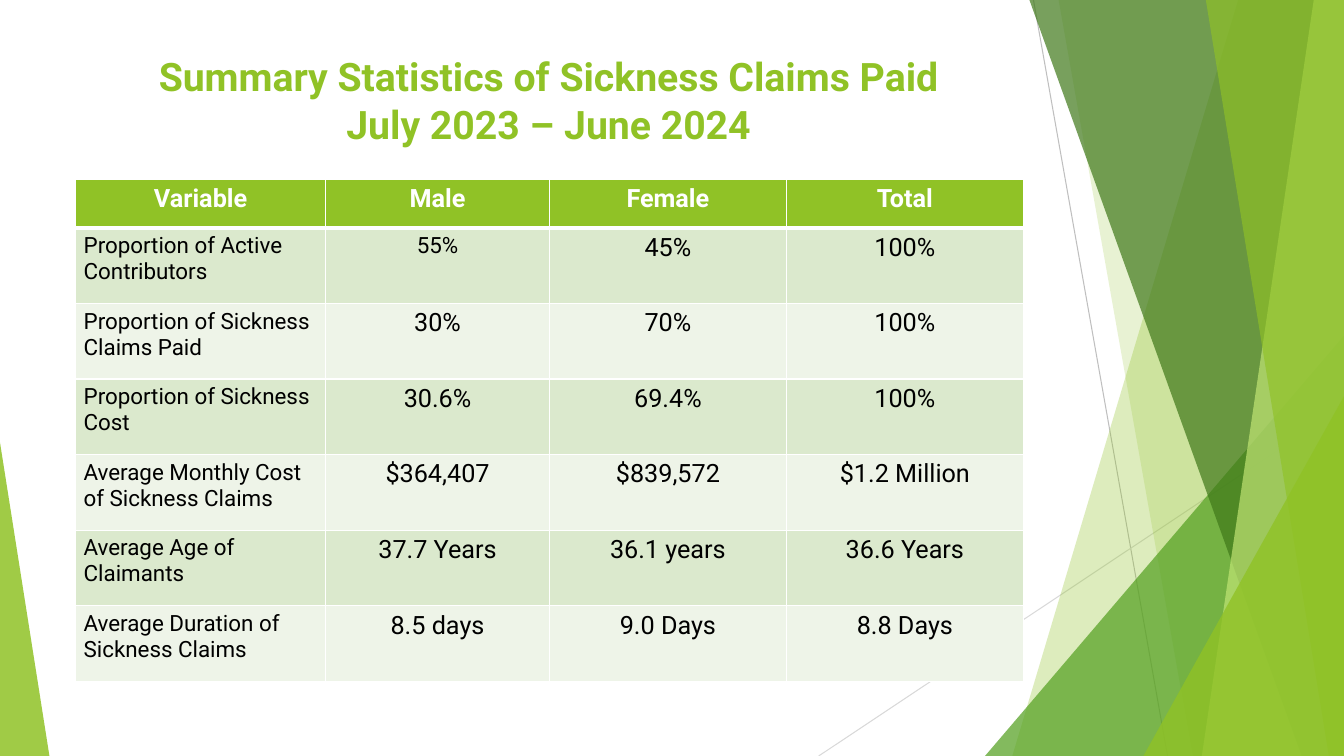
from dataclasses import dataclass

from lxml import etree
from pptx import Presentation
from pptx.dml.color import RGBColor
from pptx.enum.shapes import MSO_CONNECTOR, MSO_SHAPE
from pptx.enum.text import MSO_ANCHOR, PP_ALIGN
from pptx.oxml.ns import qn
from pptx.util import Pt

SCALE = 9144
WIDE, HIGH = 1333, 750
FONT = "Roboto"
LEFT, CENTER = PP_ALIGN.LEFT, PP_ALIGN.CENTER
MIDDLE = MSO_ANCHOR.MIDDLE
STRAIGHT = MSO_CONNECTOR.STRAIGHT
TRIANGLE = MSO_SHAPE.ISOSCELES_TRIANGLE

COLORS = {
    "white": "FFFFFF",
    "black": "000000",
    "silver": "BFBFBF",
    "mist": "D9D9D9",
    "lime": "90C226",
    "green": "54A021",
    "forest": "3F7819",
    "light": "C0E474",
    "band": "DBE9CD",
    "pale": "EEF4E8",
}


@dataclass
class Ray:
    start: tuple[int, int]
    end: tuple[int, int]
    color: str


@dataclass
class Pane:
    top: int
    foot: int
    color: str
    alpha: int


@dataclass
class Wedge:
    left: int
    top: int
    width: int
    peak: int
    color: str
    alpha: int


RAYS = [
    Ray((1025, 0), (1158, HIGH), "silver"),
    Ray((WIDE, 403), (812, HIGH), "mist"),
]

DECOR = [
    Pane(1228, 1004, "lime", 30),
    Pane(1050, 1183, "lime", 20),
    Wedge(977, 333, 356, 1, "green", 72),
    Pane(1021, 1291, "forest", 70),
    Pane(1303, 1192, "light", 70),
    Pane(1196, 1318, "lime", 65),
    Wedge(1134, 393, 199, 1, "lime", 80),
    Wedge(0, 439, 49, 0, "lime", 85),
]

COLS = [248, 222, 235, 235]
HEAD, BODY = 48, 75
ROWS = [
    ["Variable", "Male", "Female", "Total"],
    ["Proportion of Active Contributors", "55%", "45%", "100%"],
    ["Proportion of Sickness Claims Paid", "30%", "70%", "100%"],
    ["Proportion of Sickness Cost", "30.6%", "69.4%", "100%"],
    ["Average Monthly Cost of Sickness Claims", "$364,407", "$839,572", "$1.2 Million"],
    ["Average Age of Claimants", "37.7 Years", "36.1 years", "36.6 Years"],
    ["Average Duration of Sickness Claims", "8.5 days", "9.0 Days", "8.8 Days"],
]


def px(size: int) -> int:
    return size * SCALE


def rgb(name: str) -> RGBColor:
    return RGBColor.from_string(COLORS[name])


def write(frame, text: str, *, size: int, color: str, bold: bool = False,
          align=CENTER, pitch: int | None = None) -> None:
    frame.word_wrap = True
    para = frame.paragraphs[0]
    para.text = text
    para.alignment = align
    if pitch:
        para.line_spacing = Pt(pitch)
    for run in para.runs:
        run.font.name = FONT
        run.font.size = Pt(size)
        run.font.bold = bold
        run.font.color.rgb = rgb(color)


def paint(shape, color: str, alpha: int) -> None:
    shape.shadow.inherit = False
    shape.line.fill.background()
    shape.fill.solid()
    shape.fill.fore_color.rgb = rgb(color)
    tint = shape._element.spPr.find(qn("a:solidFill"))[0]
    etree.SubElement(tint, qn("a:alpha"), val=str(alpha * 1000))


def draw_ray(slide, ray: Ray) -> None:
    ends = [px(n) for n in (*ray.start, *ray.end)]
    line = slide.shapes.add_connector(STRAIGHT, *ends)
    line.line.color.rgb = rgb(ray.color)
    line.line.width = Pt(0.75)
    etree.SubElement(line._element.spPr, qn("a:effectLst"))


def draw_pane(slide, pane: Pane) -> None:
    path = slide.shapes.build_freeform(pane.top, 0, scale=SCALE)
    path.add_line_segments([(WIDE, 0), (WIDE, HIGH), (pane.foot, HIGH)], close=True)
    paint(path.convert_to_shape(), pane.color, pane.alpha)


def draw_wedge(slide, wedge: Wedge) -> None:
    shape = slide.shapes.add_shape(TRIANGLE, px(wedge.left), px(wedge.top),
                                   px(wedge.width), px(HIGH - wedge.top))
    shape.adjustments[0] = wedge.peak
    paint(shape, wedge.color, wedge.alpha)


def draw_title(slide) -> None:
    box = slide.shapes.add_textbox(px(74), px(44), px(940), px(109))
    box.text_frame.vertical_anchor = MIDDLE
    write(box.text_frame,
          "Summary Statistics of Sickness Claims Paid\nJuly 2023 – June 2024",
          size=28, color="lime", bold=True, pitch=34)


def edge(cell, side: str, width: int) -> None:
    line = etree.SubElement(cell._tc.get_or_add_tcPr(), qn(f"a:ln{side}"),
                            w=str(Pt(width)))
    fill = etree.SubElement(line, qn("a:solidFill"))
    etree.SubElement(fill, qn("a:srgbClr"), val=COLORS["white"])


def draw_cell(cell, text: str, row: int, col: int) -> None:
    head = row == 0
    for side in "LRTB":
        thick = (row, side) in ((0, "B"), (1, "T"))
        edge(cell, side, 3 if thick else 1)
    cell.fill.solid()
    cell.fill.fore_color.rgb = rgb("lime" if head else "band" if row % 2 else "pale")
    cell.margin_left = cell.margin_right = px(8)
    cell.margin_top = cell.margin_bottom = px(5)
    small = not head and (col == 0 or (row, col) == (1, 1))
    write(cell.text_frame, text, size=16 if small else 18,
          color="white" if head else "black", bold=head,
          align=CENTER if head or col else LEFT)


def draw_table(slide) -> None:
    tall = HEAD + BODY * (len(ROWS) - 1)
    table = slide.shapes.add_table(len(ROWS), len(COLS), px(75), px(178),
                                   px(sum(COLS)), px(tall)).table
    for col, width in enumerate(COLS):
        table.columns[col].width = px(width)
    for row, texts in enumerate(ROWS):
        table.rows[row].height = px(BODY if row else HEAD)
        for col, text in enumerate(texts):
            draw_cell(table.cell(row, col), text, row, col)


def main() -> None:
    deck = Presentation()
    deck.slide_width, deck.slide_height = px(WIDE), px(HIGH)
    slide = deck.slides.add_slide(deck.slide_layouts[6])
    for ray in RAYS:
        draw_ray(slide, ray)
    for item in DECOR:
        if isinstance(item, Pane):
            draw_pane(slide, item)
        else:
            draw_wedge(slide, item)
    draw_title(slide)
    draw_table(slide)
    deck.save("out.pptx")


if __name__ == "__main__":
    main()
